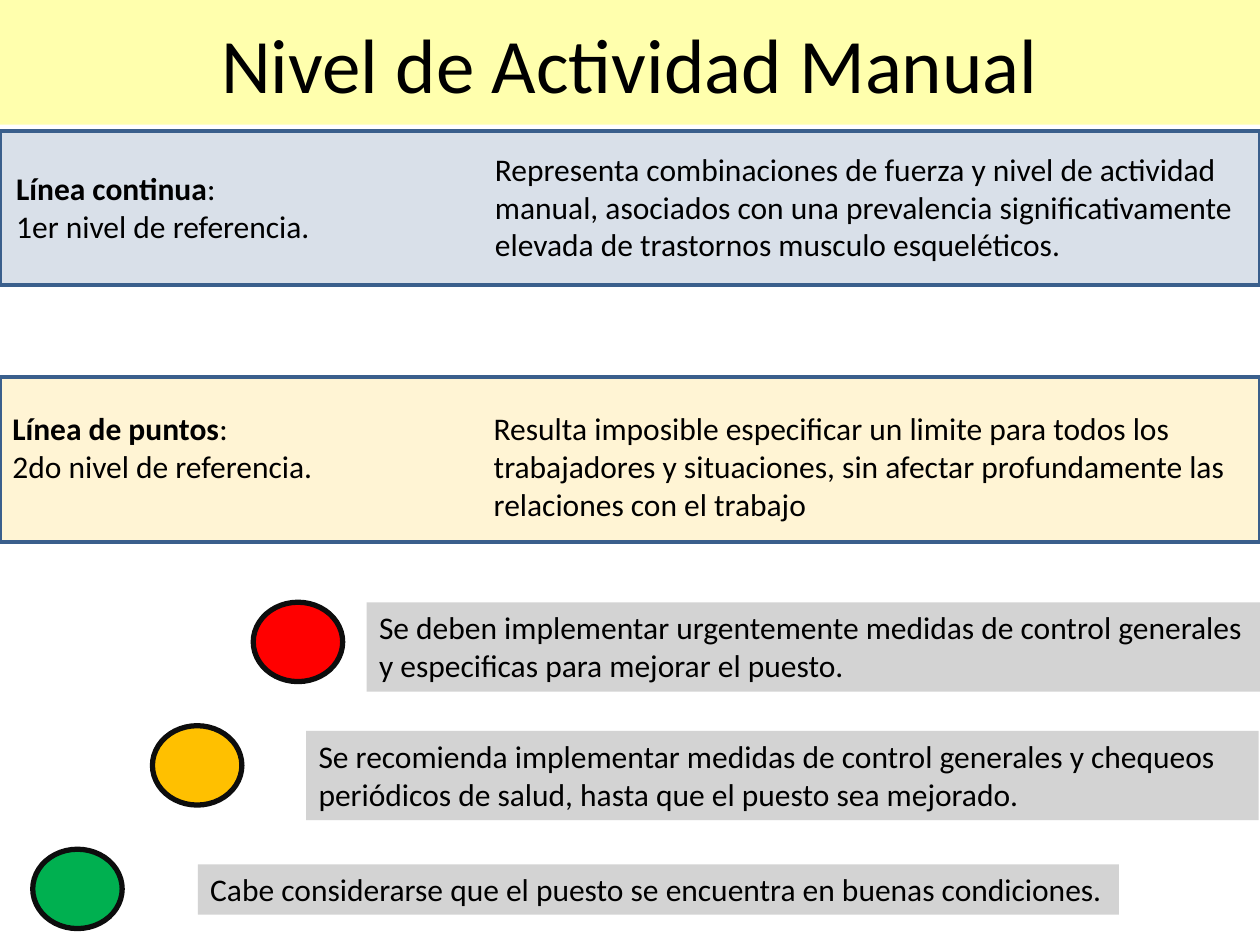
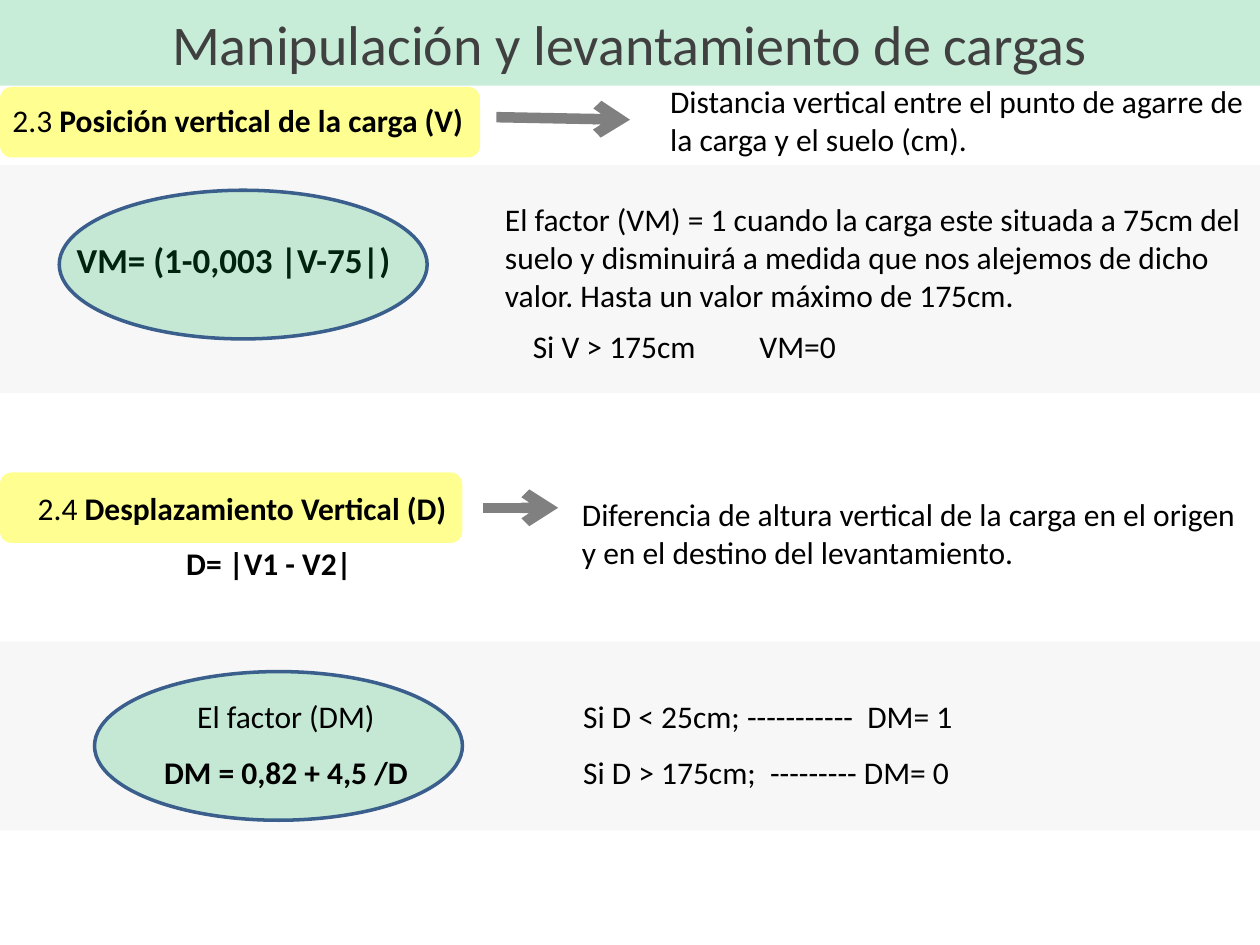
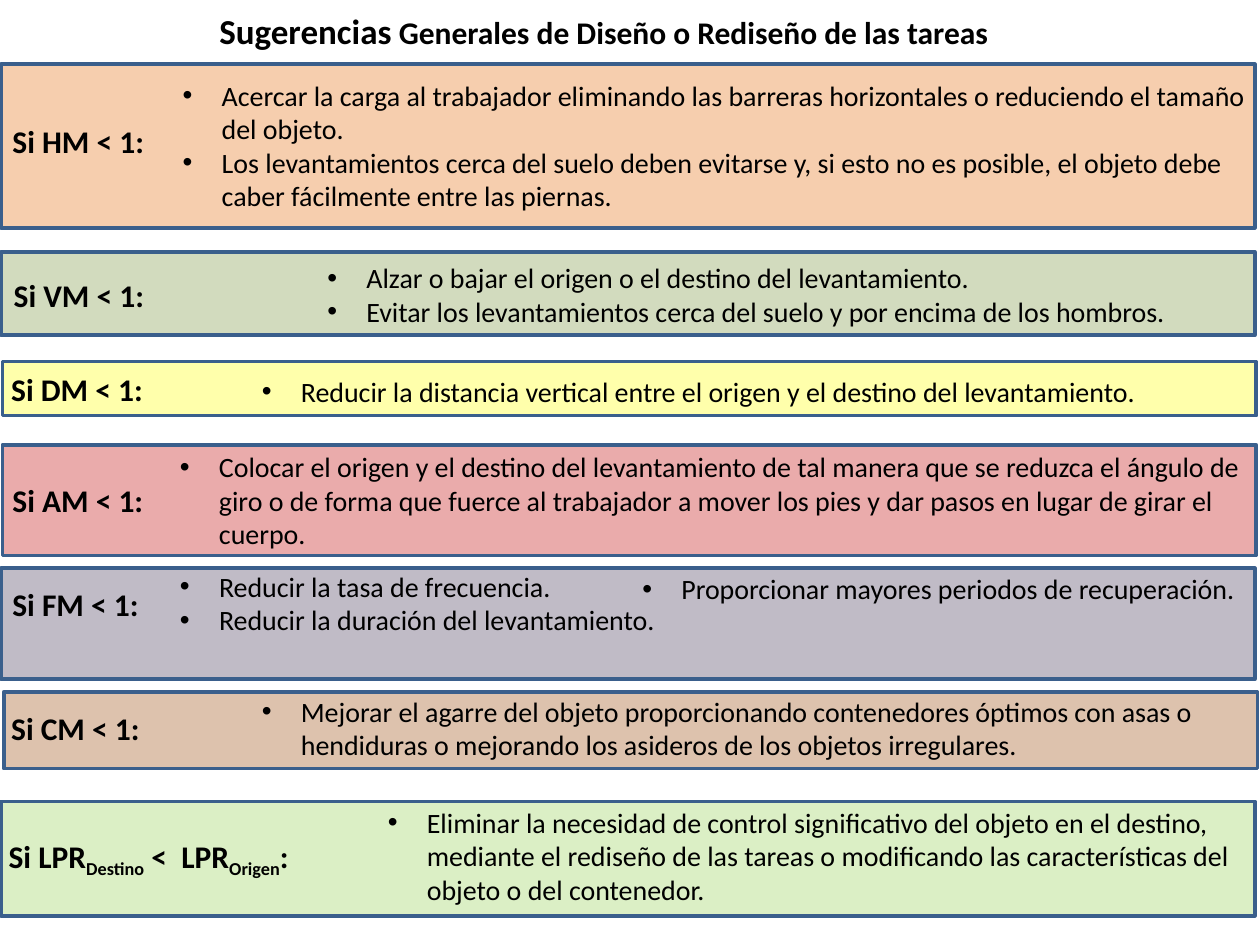
import dataclasses

import lxml.etree
import pptx
import pptx.dml.color
import pptx.enum.shapes
import pptx.enum.text
import pptx.oxml.ns
import pptx.util

Inches = pptx.util.Inches
Pt = pptx.util.Pt
MSO_SHAPE = pptx.enum.shapes.MSO_SHAPE
ALIGN = pptx.enum.text.PP_ALIGN
qn = pptx.oxml.ns.qn


@dataclasses.dataclass(frozen=True)
class Theme:
    font: str = "Calibri"
    ink: str = "000000"
    muted_ink: str = "404040"
    outline: str = "3A5F8C"
    circle_outline: str = "0D0D0D"
    gray: str = "808080"
    advice_gray: str = "BFBFBF"
    navy: str = "1F497D"
    amber: str = "FFC000"
    yellow: str = "FFFF00"
    red: str = "FF0000"
    green: str = "00B050"
    orange: str = "E46C0A"
    olive: str = "77933C"
    crimson: str = "C00000"
    purple: str = "403152"
    brown: str = "984807"
    lime: str = "92D050"
    large_title: int = 44
    title: int = 32
    lead: int = 20
    body: int = 18
    list: int = 16


THEME = Theme()

RUN_STYLES = {
    "plain": {},
    "bold": {"bold": True},
    "lead": {"bold": True, "size": THEME.lead},
    "subscript": {"bold": True, "baseline": "-25000"},
}

ACTIVITY_TITLE = "Nivel de Actividad Manual"
REFERENCE_LEVELS = [
    {
        "band": (0, 2.99, 10, 1.31), "color": THEME.amber,
        "label": [[("Línea de puntos", "bold"), (":", "plain")], "2do nivel de referencia."],
        "label_box": (0, 3.2, 2.67, 0.71),
        "meaning": "Resulta imposible especificar un limite para todos los trabajadores y situaciones, "
                   "sin afectar profundamente las relaciones con el trabajo",
        "meaning_box": (3.82, 3.2, 6.18, 1.01),
    },
    {
        "band": (0, 1.04, 10, 1.22), "color": THEME.navy,
        "label": [[("Línea continua", "bold"), (":", "plain")], "1er nivel de referencia."],
        "label_box": (0.03, 1.29, 2.62, 0.71),
        "meaning": "Representa combinaciones de fuerza y nivel de actividad manual, asociados con una "
                   "prevalencia significativamente elevada de trastornos musculo esqueléticos.",
        "meaning_box": (3.83, 1.14, 6.17, 1.01),
    },
]
CIRCLE_TOP, CIRCLE_STEP, CIRCLE_SIZE = 4.78, 0.98, (0.71, 0.63)
RISK_ADVICE = [
    (THEME.red, 2.01, (2.91, 4.78, 7.09, 0.71), True,
     "Se deben implementar urgentemente medidas de control generales y especificas para mejorar el puesto."),
    (THEME.amber, 1.21, (2.43, 5.8, 7.56, 0.71), True,
     "Se recomienda implementar medidas de control generales y chequeos periódicos de salud, "
     "hasta que el puesto sea mejorado."),
    (THEME.green, 0.26, (1.57, 6.86, 7.31, 0.4), False,
     "Cabe considerarse que el puesto se encuentra en buenas condiciones."),
]

LOAD_TITLE = "Manipulación y levantamiento de cargas"
FACTOR_BANDS = [(0, 5.09, 10, 1.5), (0, 1.31, 10, 1.81)]
FACTOR_TAGS = [(0, 3.75, 3.67, 0.56), (0, 0.69, 3.81, 0.56)]
DM_ELLIPSE = (0.75, 5.33, 2.92, 1.18)
VM_ELLIPSE = (0.47, 1.51, 2.92, 1.18)
FACTOR_ARROWS = [(3.83, 4.03, 4.43, 4.03), (3.94, 0.93, 5, 0.95)]
FACTOR_LABELS = [
    ((0, 0.75, 3.81, 0.4), [[("2.3 ", "plain"), ("Posición vertical de la carga (V)", "bold")]]),
    ((0.51, 1.84, 2.73, 0.44), [[("VM= (1-0,003 |V-75|)", "lead")]]),
    ((4.13, 2.55, 2.65, 0.4), ["Si V ˃ 175cm         VM=0"]),
    ((0.2, 3.83, 3.48, 0.4), [[("2.4 ", "plain"), ("Desplazamiento Vertical (D)", "bold")]]),
    ((1.38, 4.27, 1.53, 0.4), [[("D= |V1 - V2|", "bold")]]),
]
FACTOR_TEXTS = [
    ((5.22, 0.6, 4.78, 0.71),
     "Distancia vertical entre el punto de agarre de la carga y el suelo (cm)."),
    ((3.91, 1.54, 6.1, 1.01),
     "El factor (VM) = 1 cuando la carga este situada a 75cm del suelo y disminuirá a medida que "
     "nos alejemos de dicho valor. Hasta un valor máximo de 175cm."),
    ((4.52, 3.88, 5.48, 0.71),
     "Diferencia de altura vertical de la carga en el origen y en el destino del levantamiento."),
]
DM_TEXTS = [
    ((1.19, 5.33, 2.16, 1.01), ALIGN.CENTER,
     ["El factor (DM)", [("DM = 0,82 + 4,5 /D", "bold")]]),
    ((4.53, 5.33, 3.17, 1.01), ALIGN.LEFT,
     ["Si D < 25cm; -----------  DM= 1", "Si D ˃ 175cm;  --------- DM= 0"]),
]

DESIGN_TITLE = [("Sugerencias", "lead"), (" Generales de Diseño o Rediseño de las tareas", "bold")]
SUGGESTION_BANDS = [
    (THEME.orange, (0.01, 0.51, 9.95, 1.3)),
    (THEME.olive, (0.01, 2, 9.95, 0.66)),
    (THEME.yellow, (0.02, 2.87, 9.95, 0.43)),
    (THEME.crimson, (0.02, 3.53, 9.95, 0.88)),
    (THEME.purple, (0.01, 4.51, 9.95, 0.88)),
    (THEME.brown, (0.03, 5.49, 9.95, 0.61)),
    (THEME.lime, (0.01, 6.36, 9.95, 0.91)),
]
CONDITIONS = [
    ((0, 0.92, 1.32, 0.4), [("Si HM ˂ 1:", "bold")]),
    ((0.01, 2.14, 1.31, 0.4), [("Si VM ˂ 1:", "bold")]),
    ((-0.01, 2.89, 1.32, 0.4), [("Si DM ˂ 1:", "bold")]),
    ((0, 3.77, 1.31, 0.4), [("Si AM ˂ 1:", "bold")]),
    ((0, 4.59, 1.27, 0.4), [("Si FM ˂ 1:", "bold")]),
    ((-0.01, 5.58, 1.29, 0.4), [("Si CM ˂ 1:", "bold")]),
    ((-0.03, 6.59, 2.64, 0.4),
     [("Si LPR", "bold"), ("Destino", "subscript"), (" ˂  LPR", "bold"),
      ("Origen", "subscript"), (":", "bold")]),
]
MAIN_SUGGESTIONS = (
    (1.35, 0.57, 8.64, 1.18),
    ["Acercar la carga al trabajador eliminando las barreras horizontales o reduciendo el tamaño del objeto.",
     "Los levantamientos cerca del suelo deben evitarse y, si esto no es posible, el objeto debe caber "
     "fácilmente entre las piernas."],
)
SUGGESTIONS = [
    ((2.5, 2.02, 6.94, 0.64), False,
     ["Alzar o bajar el origen o el destino del levantamiento.",
      "Evitar los levantamientos cerca del suelo y por encima de los hombros."]),
    ((1.98, 2.92, 7.22, 0.37), False,
     ["Reducir la distancia vertical entre el origen y el destino del levantamiento."]),
    ((1.33, 3.52, 8.64, 0.91), True,
     ["Colocar el origen y el destino del levantamiento de tal manera que se reduzca el ángulo de giro o "
      "de forma que fuerce al trabajador a mover los pies y dar pasos en lugar de girar el cuerpo."]),
    ((1.33, 4.47, 4.02, 0.64), False,
     ["Reducir la tasa de frecuencia.", "Reducir la duración del levantamiento."]),
    ((5, 4.49, 4.97, 0.37), False, ["Proporcionar mayores periodos de recuperación."]),
    ((1.98, 5.46, 7.98, 0.64), True,
     ["Mejorar el agarre del objeto proporcionando contenedores óptimos con asas o hendiduras o "
      "mejorando los asideros de los objetos irregulares."]),
    ((2.98, 6.34, 7.05, 0.91), True,
     ["Eliminar la necesidad de control significativo del objeto en el destino, mediante el rediseño de "
      "las tareas o modificando las características del objeto o del contenedor."]),
]


def rgb(color):
    return pptx.dml.color.RGBColor.from_string(color)


def place(shape, box):
    shape.left, shape.top, shape.width, shape.height = map(Inches, box)


def paint(shape, color, opacity=100):
    shape.fill.solid()
    shape.fill.fore_color.rgb = rgb(color)
    if opacity < 100:
        color_element = shape.fill._xPr.find(qn("a:solidFill"))[0]
        lxml.etree.SubElement(color_element, qn("a:alpha")).set("val", str(opacity * 1000))


def add_panel(slide, box, color, opacity=100, outline=None, width=2, kind=MSO_SHAPE.RECTANGLE):
    shape = slide.shapes.add_shape(kind, *map(Inches, box))
    shape.shadow.inherit = False
    paint(shape, color, opacity)
    if outline:
        shape.line.color.rgb = rgb(outline)
        shape.line.width = Pt(width)
    else:
        shape.line.fill.background()


def add_bullet(paragraph):
    properties = paragraph._p.get_or_add_pPr()
    properties.set("marL", str(Inches(0.31)))
    properties.set("indent", str(-Inches(0.31)))
    lxml.etree.SubElement(properties, qn("a:buFont")).set("typeface", "Arial")
    lxml.etree.SubElement(properties, qn("a:buChar")).set("char", "•")


def format_run(run, style, size, color):
    settings = RUN_STYLES[style]
    run.font.name = THEME.font
    run.font.size = Pt(settings.get("size", size))
    run.font.bold = settings.get("bold", False)
    run.font.color.rgb = rgb(color)
    if "baseline" in settings:
        run.font._element.set("baseline", settings["baseline"])


def write(shape, paragraphs, size=THEME.body, color=THEME.ink, align=ALIGN.LEFT,
          wrap=True, spacing=None, bullets=False):
    frame = shape.text_frame
    frame.word_wrap = wrap
    frame.auto_size = pptx.enum.text.MSO_AUTO_SIZE.NONE
    for index, content in enumerate(paragraphs):
        pieces = [(content, "plain")] if isinstance(content, str) else content
        paragraph = frame.paragraphs[0] if index == 0 else frame.add_paragraph()
        paragraph.alignment = align
        paragraph.space_before = Pt(0)
        if spacing:
            paragraph.line_spacing = spacing
        if bullets:
            add_bullet(paragraph)
        for text, style in pieces:
            run = paragraph.add_run()
            run.text = text
            format_run(run, style, size, color)


def add_text(slide, box, paragraphs, **options):
    shape = slide.shapes.add_textbox(*map(Inches, box))
    write(shape, paragraphs, **options)
    return shape


def set_title(slide, box, content, fill=None, **options):
    title = slide.shapes.title
    place(title, box)
    title.text_frame.vertical_anchor = pptx.enum.text.MSO_ANCHOR.MIDDLE
    if fill:
        paint(title, *fill)
    write(title, [content], **options)


def add_arrow(slide, ends):
    arrow = slide.shapes.add_connector(pptx.enum.shapes.MSO_CONNECTOR.STRAIGHT, *map(Inches, ends))
    arrow.line.color.rgb = rgb(THEME.gray)
    arrow.line.width = Pt(6)
    lxml.etree.SubElement(arrow.line._get_or_add_ln(), qn("a:tailEnd")).set("type", "arrow")
    lxml.etree.SubElement(arrow._element.spPr, qn("a:effectLst"))


def build_activity(slide):
    set_title(slide, (0, 0, 10, 0.99), ACTIVITY_TITLE, (THEME.yellow, 32),
              size=THEME.large_title, align=ALIGN.CENTER)
    for level in REFERENCE_LEVELS:
        add_panel(slide, level["band"], level["color"], 17, THEME.outline)
        add_text(slide, level["label_box"], level["label"], wrap=False)
        add_text(slide, level["meaning_box"], [level["meaning"]])
    for index, (color, left, box, wrap, advice) in enumerate(RISK_ADVICE):
        circle = (left, CIRCLE_TOP + index * CIRCLE_STEP, *CIRCLE_SIZE)
        add_panel(slide, circle, color, outline=THEME.circle_outline, width=3, kind=MSO_SHAPE.OVAL)
        paint(add_text(slide, box, [advice], wrap=wrap), THEME.advice_gray, 68)


def build_load(slide):
    set_title(slide, (0, 0, 10, 0.68), LOAD_TITLE, (THEME.green, 22),
              size=THEME.title, color=THEME.muted_ink, align=ALIGN.CENTER)
    for box in FACTOR_BANDS:
        add_panel(slide, box, THEME.gray, 6)
    for box in FACTOR_TAGS:
        add_panel(slide, box, THEME.yellow, 43, kind=MSO_SHAPE.ROUNDED_RECTANGLE)
    add_panel(slide, DM_ELLIPSE, THEME.green, 20, THEME.outline, kind=MSO_SHAPE.OVAL)
    for box, paragraphs in FACTOR_LABELS:
        add_text(slide, box, paragraphs, wrap=False)
    for box, text in FACTOR_TEXTS:
        add_text(slide, box, [text])
    for box, align, paragraphs in DM_TEXTS:
        add_text(slide, box, paragraphs, align=align, wrap=False, spacing=1.5)
    for ends in FACTOR_ARROWS:
        add_arrow(slide, ends)
    add_panel(slide, VM_ELLIPSE, THEME.green, 20, THEME.outline, kind=MSO_SHAPE.OVAL)


def build_design(slide):
    set_title(slide, (1.64, 0.02, 6.36, 0.44), DESIGN_TITLE, wrap=False)
    for color, box in SUGGESTION_BANDS:
        add_panel(slide, box, color, 33, THEME.outline)
    for box, condition in CONDITIONS:
        add_text(slide, box, [condition], wrap=False)
    body = slide.placeholders[1]
    box, suggestions = MAIN_SUGGESTIONS
    place(body, box)
    write(body, suggestions, size=THEME.list, bullets=True)
    slide.shapes._spTree.append(body._element)
    for box, wrap, suggestions in SUGGESTIONS:
        add_text(slide, box, suggestions, size=THEME.list, wrap=wrap, bullets=True)


def main():
    presentation = pptx.Presentation()
    presentation.slide_width = Inches(10)
    presentation.slide_height = Inches(7.5)
    title_and_content, title_only = presentation.slide_layouts[1], presentation.slide_layouts[5]
    for layout, build in [(title_only, build_activity), (title_only, build_load),
                          (title_and_content, build_design)]:
        build(presentation.slides.add_slide(layout))
    presentation.save("out.pptx")


if __name__ == "__main__":
    main()
